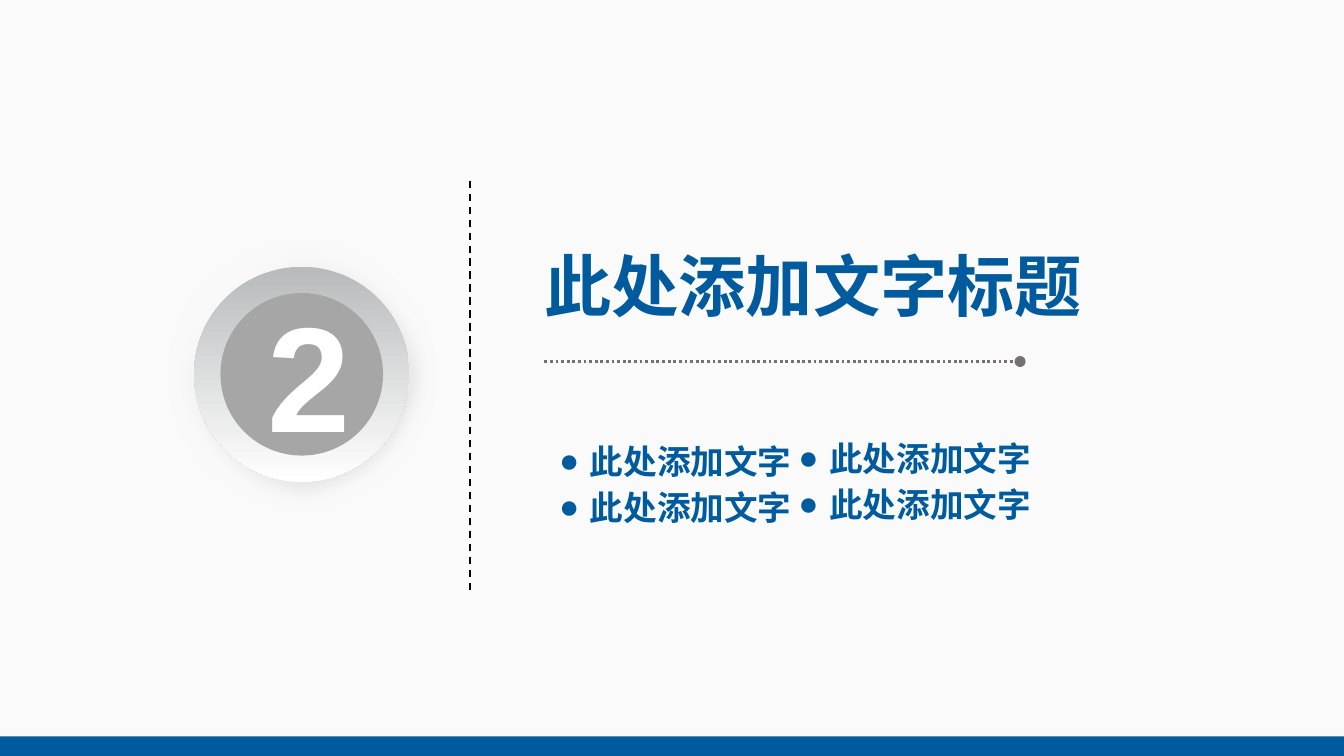
from pptx import Presentation
from pptx.dml.color import RGBColor
from pptx.enum.dml import MSO_LINE
from pptx.enum.shapes import MSO_CONNECTOR, MSO_SHAPE
from pptx.enum.text import MSO_AUTO_SIZE, PP_ALIGN
from pptx.oxml.ns import qn
from pptx.util import Pt
from lxml.etree import SubElement

UNIT = 4572
HUES = {
    "blue": "005A9E", "gray": "A6A6A6", "rule": "767171",
    "black": "000000", "white": "FFFFFF", "glow": "D9D9D9",
    "steel": "B8BBBC", "top": "FAFAFA", "base": "FCFCFC",
}


def px(*nums):
    return [round(n * UNIT) for n in nums]


def hue(name):
    return RGBColor.from_string(HUES[name])


def add(node, tag, **attrs):
    return SubElement(node, qn(tag), attrs)


def blend(fill, first, last):
    fill.gradient()
    fill.gradient_angle = 270
    for stop, name in zip(fill.gradient_stops, (first, last)):
        stop.color.rgb = hue(name)


def form(shapes, kind, box, *tones):
    item = shapes.add_shape(kind, *px(*box))
    item.shadow.inherit = False
    item.line.fill.background()
    if len(tones) == 2:
        blend(item.fill, *tones)
    else:
        item.fill.solid()
        item.fill.fore_color.rgb = hue(tones[0])
    return item


def rule(shapes, ends, tone, width, dash, tip=None):
    item = shapes.add_connector(MSO_CONNECTOR.STRAIGHT, *px(*ends))
    item.line.color.rgb = hue(tone)
    item.line.width = Pt(width)
    item.line.dash_style = dash
    props = item.element.spPr
    if tip:
        add(props.find(qn("a:ln")), "a:tailEnd", type=tip)
    add(props, "a:effectLst")


def write(shapes, text, box, size, tone="blue", pad=(14, 8), wrap=False,
          align=None, mark=None):
    item = shapes.add_textbox(*px(*box))
    frame = item.text_frame
    frame.word_wrap = wrap
    frame.auto_size = MSO_AUTO_SIZE.SHAPE_TO_FIT_TEXT
    frame.margin_left = frame.margin_right = px(pad[0])[0]
    frame.margin_top = frame.margin_bottom = px(pad[1])[0]
    para = frame.paragraphs[0]
    if mark:
        props = para._p.get_or_add_pPr()
        dent = px(46)[0]
        props.set("marL", str(dent))
        props.set("indent", str(-dent))
        add(props, "a:buFont", typeface="Arial")
        add(props, "a:buChar", char=mark)
    if align is not None:
        para.alignment = align
    run = para.add_run()
    run.text = text
    font = run.font
    font.name, font.size, font.bold = "Arial", Pt(size), True
    font.color.rgb = hue(tone)


def badge(slide, text, left, top, size):
    group = slide.shapes.add_group_shape().shapes

    def inset(gap):
        return left + gap, top + gap, size - 2 * gap, size - 2 * gap

    glow = form(group, MSO_SHAPE.OVAL, inset(0), "glow", "white")
    props = glow.element.spPr
    grad = props.find(qn("a:gradFill"))
    grad.remove(grad.find(qn("a:lin")))
    focus = add(grad, "a:path", path="circle")
    add(focus, "a:fillToRect", l="100000", t="100000")
    add(props.find(qn("a:effectLst")), "a:softEdge", rad="127000")
    ring = form(group, MSO_SHAPE.ROUNDED_RECTANGLE, inset(41), "steel", "white")
    ring.adjustments[0] = 0.5
    form(group, MSO_SHAPE.OVAL, inset(80), "gray")
    write(slide.shapes, text, (left + 130, top + 56, 140, 290), 80,
          tone="white", pad=(20, 10), wrap=True, align=PP_ALIGN.CENTER)


def heading(slide, text, left, top, width, height):
    shapes = slide.shapes
    level = top + 182
    rule(shapes, (left + 14, level, left + 722, level), "rule", 1.5,
         MSO_LINE.ROUND_DOT, tip="oval")
    write(shapes, text, (left, top, width, height), 36)


def topics(slide, rows, left, top):
    for i, row in enumerate(rows):
        for j, text in enumerate(row):
            box = left + 356 * j, top + 68 * i - 4 * j, 380, 76
            write(slide.shapes, text, box, 18, mark="●")


def main():
    deck = Presentation()
    deck.slide_width, deck.slide_height = px(2000, 1125)
    slide = deck.slides.add_slide(deck.slide_layouts[6])
    blend(slide.background.fill, "top", "base")
    badge(slide, "2", 248, 356, 402)
    rule(slide.shapes, (700, 878, 700, 264), "black", 1, MSO_LINE.DASH)
    heading(slide, "此处添加文字标题", 796, 356, 838, 136)
    topics(slide, [["此处添加文字"] * 2] * 2, 818, 648)
    form(slide.shapes, MSO_SHAPE.RECTANGLE, (0, 1096, 2000, 29), "blue")
    deck.save("out.pptx")


if __name__ == "__main__":
    main()
